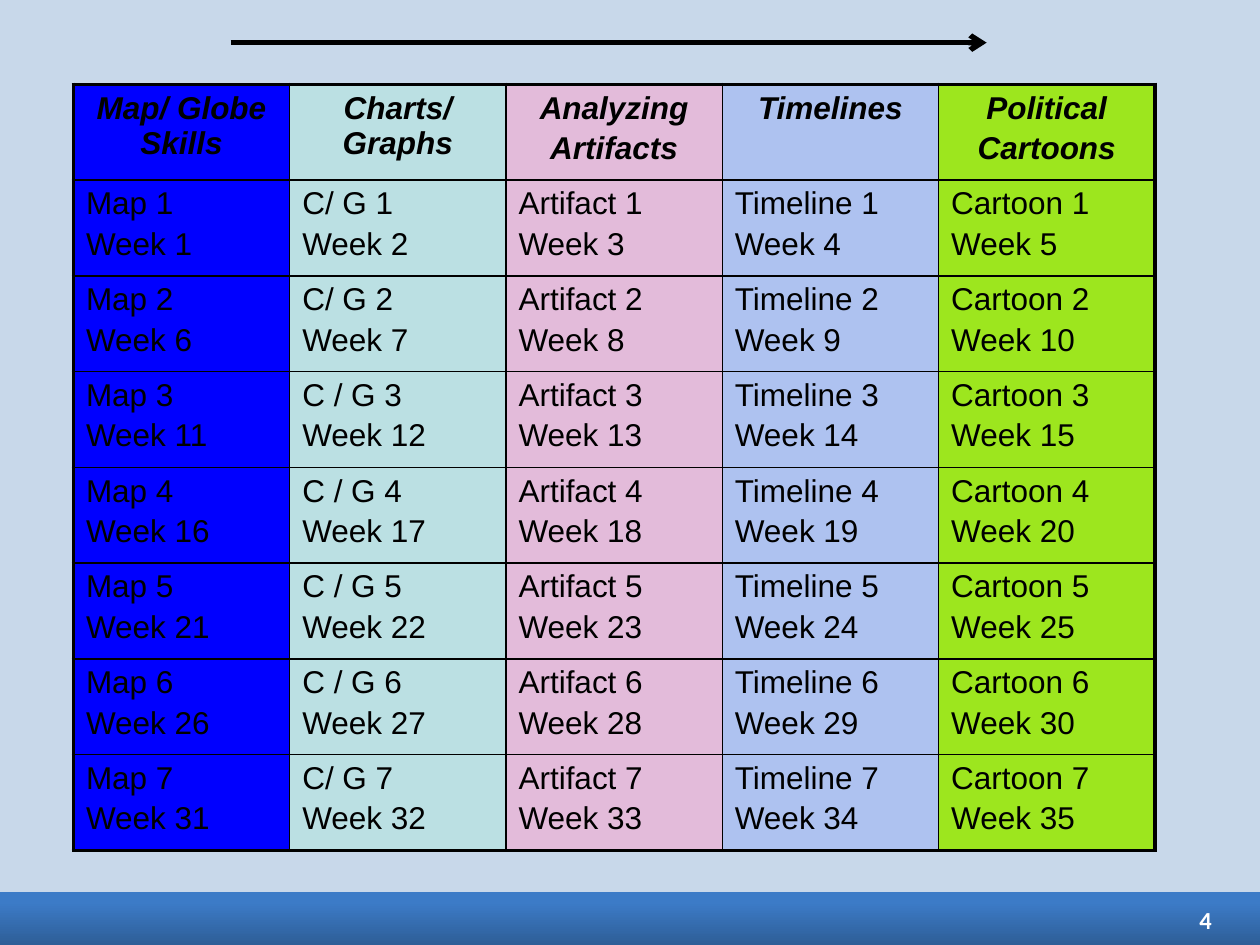
from lxml.etree import SubElement
from pptx import Presentation
from pptx.dml.color import RGBColor
from pptx.enum.shapes import MSO_CONNECTOR as Connector, MSO_SHAPE as Shape
from pptx.enum.text import MSO_ANCHOR as Anchor, PP_ALIGN as Align
from pptx.oxml.ns import qn
from pptx.util import Cm, Pt

BLACK = "000000"
SKILLS = [
    (["Map/ Globe Skills"], "Map", "0000FF"),
    (["Charts/ Graphs"], "C/ G", "BBE0E3"),
    (["Analyzing", "Artifacts"], "Artifact", "E3BBDA"),
    (["Timelines"], "Timeline", "AEC2F0"),
    (["Political", "Cartoons"], "Cartoon", "9DE61E"),
]
ROUNDS = 7
SPACED_ROUNDS = range(3, 7)
HEADER_FONT = {"name": "Arial", "size": Pt(18), "bold": True, "italic": True}
BODY_FONT = {"name": "Arial", "size": Pt(18), "bold": False, "italic": False}
NUMBER_FONT = {"name": "Calibri", "size": Pt(14), "bold": True}


def rgb(value):
    return RGBColor.from_string(value)


def set_all(target, values):
    for name, value in values.items():
        setattr(target, name, value)


def write_lines(frame, lines, font, color, align):
    for index, line in enumerate(lines):
        paragraph = frame.paragraphs[0] if index == 0 else frame.add_paragraph()
        paragraph.text = line
        paragraph.alignment = align
        paragraph.space_before = Pt(3 if index else 0)
        set_all(paragraph.font, font)
        paragraph.font.color.rgb = rgb(color)


def add_footer(slide, left, top, width, height):
    band = slide.shapes.add_shape(Shape.RECTANGLE, Cm(left), Cm(top), Cm(width), Cm(height))
    band.shadow.inherit = False
    band.line.fill.background()
    band.fill.gradient()
    band.fill.gradient_angle = 90
    for stop, (position, color) in zip(band.fill.gradient_stops, [(0, "2E5E97"), (0.8, "3C7BC7")]):
        stop.position = position
        stop.color.rgb = rgb(color)

    number = slide.shapes.add_textbox(
        Cm(left + width - 1.42), Cm(top + 0.16), Cm(0.58), Cm(0.81))
    frame = number.text_frame
    margins = dict.fromkeys(
        ["margin_left", "margin_top", "margin_right", "margin_bottom"], Cm(0.13))
    set_all(frame, {**margins, "word_wrap": False, "vertical_anchor": Anchor.MIDDLE})
    write_lines(frame, ["4"], NUMBER_FONT, "FFFFFF", Align.RIGHT)


def set_borders(cell, widths):
    properties = cell._tc.get_or_add_tcPr()
    for side, width in widths.items():
        line = SubElement(properties, qn(f"a:ln{side}"), w=str(Pt(width)))
        fill = SubElement(line, qn("a:solidFill"))
        SubElement(fill, qn("a:srgbClr"), val=BLACK)


def cell_lines(row, column):
    header, label, _ = SKILLS[column]
    if row == 0:
        return header
    if row in SPACED_ROUNDS:
        label = label.replace("/", " /")
    week = (row - 1) * len(SKILLS) + column + 1
    return [f"{label} {row}", f"Week {week}"]


def add_schedule(slide, left, top, width, height):
    rows, columns = ROUNDS + 1, len(SKILLS)
    table = slide.shapes.add_table(
        rows, columns, Cm(left), Cm(top), Cm(width), Cm(height)).table
    set_all(table, {"first_row": False, "horz_banding": False})
    for column in table.columns:
        column.width = Cm(width / columns)
    for row in table.rows:
        row.height = Cm(height / rows)

    for row in range(rows):
        font, align = (HEADER_FONT, Align.CENTER) if row == 0 else (BODY_FONT, Align.LEFT)
        for column, (_, _, color) in enumerate(SKILLS):
            cell = table.cell(row, column)
            outer_sides = {
                "L": column == 0,
                "R": column == columns - 1,
                "T": row == 0,
                "B": row == rows - 1,
            }
            set_borders(cell, {side: 2.25 if outer else 1 for side, outer in outer_sides.items()})
            cell.fill.solid()
            cell.fill.fore_color.rgb = rgb(color)
            write_lines(cell.text_frame, cell_lines(row, column), font, BLACK, align)


def add_arrow(slide, left, top, width):
    arrow = slide.shapes.add_connector(
        Connector.STRAIGHT, Cm(left), Cm(top), Cm(left + width), Cm(top))
    arrow.line.width = Pt(3)
    arrow.line.color.rgb = rgb(BLACK)
    SubElement(arrow.line._get_or_add_ln(), qn("a:tailEnd"), type="arrow")
    SubElement(arrow._element.spPr, qn("a:effectLst"))


def main():
    presentation = Presentation()
    set_all(presentation, {"slide_width": Cm(25.4), "slide_height": Cm(19.05)})
    slide = presentation.slides.add_slide(presentation.slide_layouts.get_by_name("Blank"))
    slide.background.fill.solid()
    slide.background.fill.fore_color.rgb = rgb("C8D8EA")
    add_footer(slide, 0, 17.98, 25.4, 1.07)
    add_schedule(slide, 1.48, 1.7, 21.8, 15.44)
    add_arrow(slide, 4.65, 0.86, 15.24)
    presentation.save("out.pptx")


if __name__ == "__main__":
    main()
